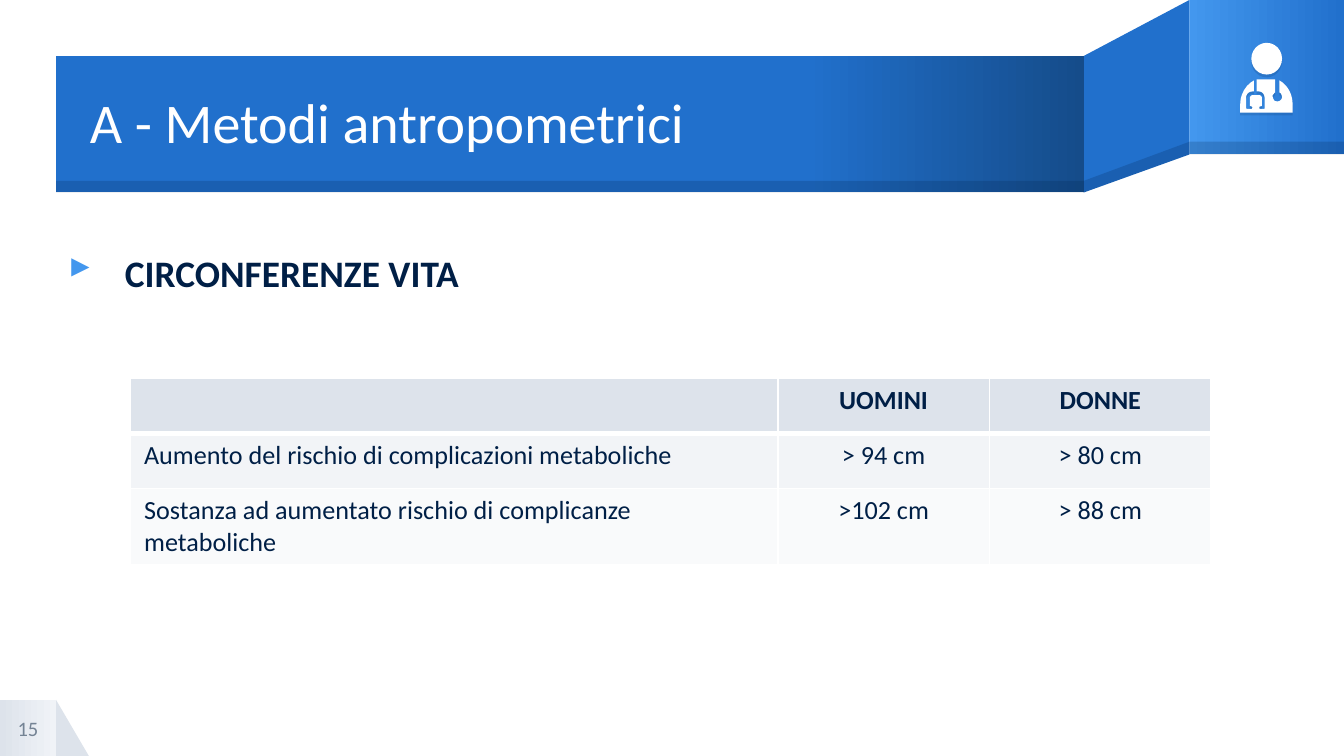
from lxml.etree import SubElement
from pptx import Presentation
from pptx.dml.color import RGBColor
from pptx.enum.shapes import MSO_SHAPE as Shape
from pptx.enum.text import MSO_ANCHOR as Anchor, PP_ALIGN as Align
from pptx.oxml.ns import qn
from pptx.util import Cm, Pt

WHITE, NAVY, BLUE, SKY = "FFFFFF", "001F46", "2170CC", "4397EE"
DEEP, MIST, PALE, GREY = "154C8A", "DDE3EB", "F0F3F7", "748394"


def color(code):
    return RGBColor.from_string(code)


def add_color(parent, code, alpha=None):
    """Append a colour element, with opacity in percent if given."""
    node = SubElement(parent, qn("a:srgbClr"), val=code)
    if alpha is not None:
        SubElement(node, qn("a:alpha"), val=str(alpha * 1000))


def trace(start, segments, steps=6):
    """Turn line ends (2 numbers) and cubic curves (6 numbers) into points."""
    points = [start]
    for segment in segments:
        if len(segment) == 2:
            points.append(segment)
            continue
        x0, y0 = points[-1]
        x1, y1, x2, y2, x3, y3 = segment
        for step in range(1, steps + 1):
            t = step / steps
            u = 1 - t
            a, b, c, d = u ** 3, 3 * u * u * t, 3 * u * t * t, t ** 3
            points.append((a * x0 + b * x1 + c * x2 + d * x3,
                           a * y0 + b * y1 + c * y2 + d * y3))
    return points


class SlideBuilder:
    font = "Calibri"

    def __init__(self, deck):
        self.slide = deck.slides.add_slide(deck.slide_layouts[6])
        self.shapes = self.slide.shapes

    def paint(self, shape, fill, alpha=None):
        """Fill with one colour, or with a left-to-right list of stops."""
        shape.shadow.inherit = False
        shape.line.fill.background()
        if isinstance(fill, list):
            shape.fill.gradient()
            shape.fill.gradient_angle = 0
            stops = shape._element.spPr.find(".//" + qn("a:gsLst"))
            for stop in list(stops):
                stops.remove(stop)
            for position, code in fill:
                add_color(SubElement(stops, qn("a:gs"), pos=str(position * 1000)), code)
        else:
            shape.fill.solid()
            shape.fill.fore_color.rgb = color(fill)
            if alpha is not None:
                node = shape._element.spPr.find(qn("a:solidFill"))
                node.remove(node[0])
                add_color(node, fill, alpha)
        return shape

    def preset(self, kind, left, top, width, height, fill, alpha=None):
        shape = self.shapes.add_shape(kind, Cm(left), Cm(top), Cm(width), Cm(height))
        return self.paint(shape, fill, alpha)

    def outline(self, points, fill, alpha=None):
        corners = [(Cm(x), Cm(y)) for x, y in points]
        builder = self.shapes.build_freeform(*corners[0])
        builder.add_line_segments(corners[1:], close=True)
        return self.paint(builder.convert_to_shape(), fill, alpha)

    def drop_shadow(self, shape):
        effects = shape._element.spPr.find(qn("a:effectLst"))
        shadow = SubElement(effects, qn("a:outerShdw"), dist=str(Pt(1.5)), dir="5400000",
                            algn="bl", rotWithShape="0")
        add_color(shadow, NAVY, 15)

    def add_span(self, para, text, size, code, bold=False, align=Align.LEFT):
        para.alignment = align
        span = para.add_run()
        span.text = text
        font = span.font
        font.name, font.size, font.bold = self.font, Pt(size), bold
        font.color.rgb = color(code)

    def text(self, left, top, width, height, words, size, code, bold=False,
             align=Align.LEFT, anchor=Anchor.MIDDLE, spacing=None, bullet=None):
        box = self.shapes.add_textbox(Cm(left), Cm(top), Cm(width), Cm(height))
        frame = box.text_frame
        frame.word_wrap = True
        frame.vertical_anchor = anchor
        frame.margin_left = frame.margin_top = frame.margin_right = frame.margin_bottom = 0
        para = frame.paragraphs[0]
        if spacing:
            para.line_spacing = spacing
        if bullet:
            props = para._p.get_or_add_pPr()
            props.set("marL", str(Cm(1.27)))
            props.set("indent", str(Cm(-1.07)))
            add_color(SubElement(props, qn("a:buClr")), SKY)
            SubElement(props, qn("a:buChar"), char=bullet)
        self.add_span(para, words, size, code, bold, align)

    def borders(self, cell, top, bottom):
        props = cell._tc.get_or_add_tcPr()
        for side, width in (("L", 1), ("R", 1), ("T", top), ("B", bottom)):
            line = SubElement(props, qn("a:ln" + side), w=str(Pt(width)))
            add_color(SubElement(line, qn("a:solidFill")), WHITE)

    def table(self, left, top, widths, height, rows, fills):
        frame = self.shapes.add_table(len(rows), len(widths), Cm(left), Cm(top),
                                      Cm(sum(widths)), Cm(height * len(rows)))
        table = frame.table
        for column, width in zip(table.columns, widths):
            column.width = Cm(width)
        for r, words in enumerate(rows):
            for c, word in enumerate(words):
                cell = table.cell(r, c)
                self.borders(cell, 3 if r == 1 else 1, 3 if r == 0 else 1)
                cell.fill.solid()
                cell.fill.fore_color.rgb = color(fills[r])
                if word:
                    self.add_span(cell.text_frame.paragraphs[0], word, 14, NAVY, r == 0,
                                  Align.CENTER if c else Align.LEFT)


def draw_ribbon(page):
    left, fold, tile, side = 1.06, 20.48, 22.48, 2.92
    page.outline([(tile, 0), (fold, 1.06), (fold, 3.64), (tile, side)], BLUE)
    page.preset(Shape.RECTANGLE, tile, 0, side, side, [(0, SKY), (100, BLUE)])
    page.preset(Shape.RECTANGLE, left, 1.06, fold - left, 2.58,
                [(0, BLUE), (73, BLUE), (100, DEEP)])
    page.outline([(tile, 2.68), (fold, 3.42), (fold, 3.64), (tile, side)], NAVY, 20)
    page.preset(Shape.RECTANGLE, tile, 2.68, side, 0.24, NAVY, 20)
    page.preset(Shape.RECTANGLE, left, 3.42, fold - left, 0.22, NAVY, 20)


def draw_doctor(page):
    body = trace((24.18, 1.52), [
        (24.18, 1.75), (24.21, 1.75, 24.23, 1.8, 24.23, 1.85),
        (24.21, 1.91, 24.16, 1.93, 24.1, 1.91), (24.08, 1.91, 24.05, 1.85, 24.05, 1.8),
        (24.08, 1.78, 24.08, 1.75, 24.1, 1.75), (24.1, 1.5),
        (24.08, 1.5, 24.03, 1.5, 24, 1.5), (23.88, 1.5), (23.75, 1.5),
        (23.75, 1.73), (23.8, 1.73), (23.85, 1.73, 23.9, 1.78, 23.9, 1.85),
        (23.9, 2.03), (23.9, 2.06, 23.9, 2.06, 23.88, 2.06), (23.83, 2.06),
        (23.8, 2.06, 23.8, 2.06, 23.8, 2.03), (23.8, 2.03, 23.8, 2.01, 23.83, 2.01),
        (23.85, 2.01), (23.85, 1.85), (23.85, 1.83, 23.83, 1.8, 23.8, 1.8),
        (23.67, 1.8), (23.65, 1.8, 23.62, 1.83, 23.62, 1.85), (23.62, 2.01),
        (23.65, 2.01), (23.65, 2.01, 23.67, 2.03, 23.67, 2.03),
        (23.67, 2.06, 23.65, 2.06, 23.65, 2.06), (23.57, 2.06),
        (23.57, 2.06, 23.55, 2.06, 23.55, 2.03), (23.55, 1.85),
        (23.55, 1.78, 23.6, 1.73, 23.67, 1.73), (23.7, 1.73), (23.7, 1.52),
        (23.55, 1.6, 23.44, 1.78, 23.44, 1.96), (23.44, 2.13), (24.43, 2.13),
        (24.43, 1.96), (24.43, 1.78, 24.33, 1.6, 24.18, 1.52)])
    page.drop_shadow(page.outline(body, WHITE))
    page.drop_shadow(page.preset(Shape.OVAL, 23.65, 0.81, 0.58, 0.6, WHITE))


def main():
    deck = Presentation()
    deck.slide_width, deck.slide_height = Cm(25.4), Cm(14.29)
    page = SlideBuilder(deck)

    corner, top = 1.06, 13.23
    page.preset(Shape.RIGHT_TRIANGLE, corner, top, 0.62, corner, MIST)
    page.preset(Shape.RECTANGLE, 0, top, corner, corner, [(0, MIST), (100, PALE)])
    draw_ribbon(page)
    page.text(0, top, corner, corner, "15", 11, GREY, align=Align.CENTER)
    draw_doctor(page)

    page.text(1.7, 1.09, 20.8, 2.57, "A - Metodi antropometrici", 30, WHITE, spacing=0.9)
    page.table(2.47, 7.15, [12.23, 4, 4.19], 1.04, [
        ("", "UOMINI", "DONNE"),
        ("Aumento del rischio di complicazioni metaboliche", "> 94 cm", "> 80 cm"),
        ("Sostanza ad aumentato rischio di complicanze metaboliche", ">102 cm", "> 88 cm"),
    ], [MIST, "F2F4F7", "F9FAFB"])
    page.text(1.09, 4.72, 21.8, 3, "CIRCONFERENZE VITA", 20, NAVY, bold=True,
              anchor=Anchor.TOP, bullet="▸")
    deck.save("out.pptx")


if __name__ == "__main__":
    main()
